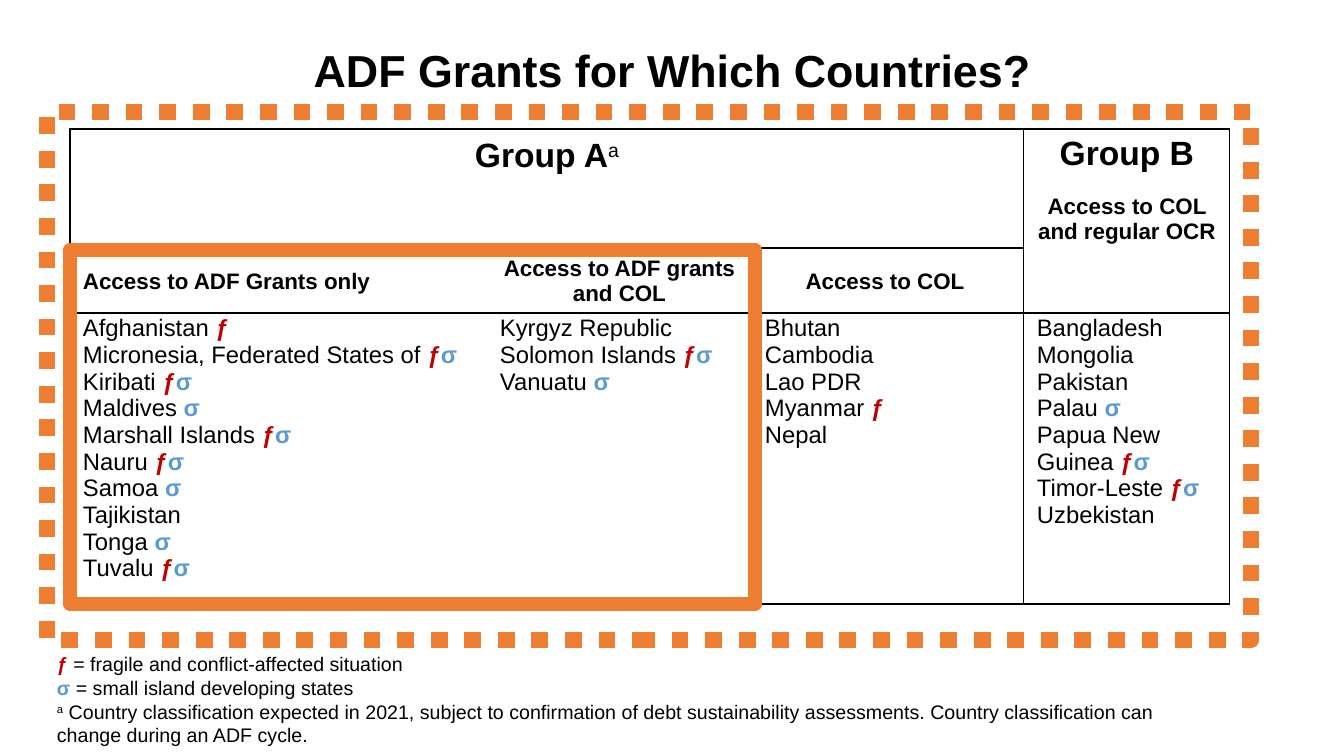
"""Builds the slide on which countries receive ADF grants."""
import itertools

import lxml.etree
import pptx
import pptx.dml.color
import pptx.enum.dml
import pptx.enum.shapes
import pptx.enum.text
import pptx.oxml.ns
import pptx.util

TITLE = "ADF Grants for Which Countries?"
GROUPS = {0: ["Group Aᵃ"], 3: ["Group B", "Access to COL and regular OCR"]}
HEADS = ["Access to ADF Grants only", "Access to ADF grants and COL", "Access to COL "]
LISTS = [
    ["Afghanistan ƒ", "Micronesia, Federated States of ƒσ", "Kiribati ƒσ",
     "Maldives σ", "Marshall Islands ƒσ", "Nauru ƒσ", "Samoa σ", "Tajikistan",
     "Tonga σ", "Tuvalu ƒσ"],
    ["Kyrgyz Republic", "Solomon Islands ƒσ", "Vanuatu σ"],
    ["Bhutan", "Cambodia", "Lao PDR", "Myanmar ƒ", "Nepal"],
    ["Bangladesh", "Mongolia", "Pakistan", "Palau σ", "Papua New", "Guinea ƒσ",
     "Timor-Leste ƒσ", "Uzbekistan"],
]
NOTES = [
    "ƒ = fragile and conflict-affected situation",
    "σ = small island developing states",
    "ᵃ Country classification expected in 2021, subject to confirmation of debt "
    "sustainability assessments. Country classification can change during an ADF cycle.",
]
SIDES = [["LTRB", "TB", "TRB", "LTR"], ["LTB", "TB", "TRB", "LRB"],
         ["LTB", "TB", "TRB", "LTRB"]]
COLS = [417, 265, 272, 206]
ROWS = [119, 65, 291]
LEFT, TOP = 70, 129

BLACK = pptx.dml.color.RGBColor(0, 0, 0)
RED = pptx.dml.color.RGBColor(0xC0, 0, 0)
BLUE = pptx.dml.color.RGBColor(0x5B, 0x9B, 0xD5)
ORANGE = pptx.dml.color.RGBColor(0xED, 0x7D, 0x31)
MARKS = {"ƒ": RED, "σ": BLUE}
FONT = "Arial"
NO_GRID = "{2D5ABB26-0587-4C30-8999-92F81FD0307C}"
CENTER = pptx.enum.text.PP_ALIGN.CENTER
START = pptx.enum.text.PP_ALIGN.LEFT
MIDDLE = pptx.enum.text.MSO_ANCHOR.MIDDLE
UPPER = pptx.enum.text.MSO_ANCHOR.TOP


def px(count):
    return pptx.util.Emu(round(count * 914400 / 100.8))


def write(frame, lines, sizes, bold=False, align=START):
    for index, line in enumerate(lines):
        para = frame.paragraphs[0] if index == 0 else frame.add_paragraph()
        para.alignment = align
        size = sizes[min(index, len(sizes) - 1)]
        for kind, chars in itertools.groupby(line, lambda c: c if c in "ƒσᵃ" else ""):
            run = para.add_run()
            run.text = "".join(chars).replace("ᵃ", "a")
            run.font.name = FONT
            run.font.size = pptx.util.Pt(size)
            run.font.bold = kind in MARKS or (bold and kind != "ᵃ")
            run.font.color.rgb = MARKS.get(kind, BLACK)
            if kind == "ᵃ":
                run._r.get_or_add_rPr().set("baseline", "30000")


def add_text(slide, box, lines, size, anchor, **style):
    frame = slide.shapes.add_textbox(*map(px, box)).text_frame
    frame.word_wrap = True
    frame.vertical_anchor = anchor
    write(frame, lines, [size], **style)
    return frame


def edge(cell, sides):
    props = cell._tc.get_or_add_tcPr()
    for side in "LRTB":
        if side in sides:
            line = lxml.etree.SubElement(props, pptx.oxml.ns.qn("a:ln" + side), w="12700")
            fill = lxml.etree.SubElement(line, pptx.oxml.ns.qn("a:solidFill"))
            lxml.etree.SubElement(fill, pptx.oxml.ns.qn("a:srgbClr"), val=str(BLACK))


def add_grid(slide):
    box = (LEFT, TOP, sum(COLS), sum(ROWS))
    table = slide.shapes.add_table(len(ROWS), len(COLS), *map(px, box)).table
    table.first_row = table.horz_banding = False
    table._tbl.tblPr.find(pptx.oxml.ns.qn("a:tableStyleId")).text = NO_GRID
    for col, width in zip(table.columns, COLS):
        col.width = px(width)
    for row, height in zip(table.rows, ROWS):
        row.height = px(height)
    for r, c in itertools.product(range(len(ROWS)), range(len(COLS))):
        cell = table.cell(r, c)
        edge(cell, SIDES[r][c])
        cell.fill.background()
        cell.margin_left = cell.margin_right = px(13)
        cell.margin_top, cell.margin_bottom = px(2), 0
    table.cell(0, 0).merge(table.cell(0, 2))
    table.cell(0, 0).margin_top = px(8)
    table.cell(0, 3).vertical_anchor = MIDDLE
    for c, lines in GROUPS.items():
        write(table.cell(0, c).text_frame, lines, [24, 16], True, CENTER)
    table.cell(0, 3).text_frame.paragraphs[1].space_before = pptx.util.Pt(16)
    for c, head in enumerate(HEADS):
        table.cell(1, c).vertical_anchor = MIDDLE
        write(table.cell(1, c).text_frame, [head], [16], True, CENTER if c else START)
    for c, names in enumerate(LISTS):
        write(table.cell(2, c).text_frame, names, [17])


def add_frame(slide, box, weight, dash=None):
    shape = slide.shapes.add_shape(
        pptx.enum.shapes.MSO_SHAPE.RECTANGLE, *map(px, box))
    shape.shadow.inherit = False
    shape.fill.background()
    shape.line.color.rgb = ORANGE
    shape.line.width = pptx.util.Pt(weight)
    if dash:
        shape.line.dash_style = dash


def main():
    deck = pptx.Presentation()
    deck.slide_width, deck.slide_height = px(1344), px(756)
    slide = deck.slides.add_slide(deck.slide_layouts[6])
    title = add_text(slide, (93, 40, 1159, 146), [TITLE], 32, UPPER,
                     bold=True, align=CENTER)
    title.margin_top = px(9)
    title.paragraphs[0].line_spacing = 0.9
    add_text(slide, (47, 647, 1144, 105), NOTES, 14, MIDDLE)
    add_grid(slide)
    add_frame(slide, (LEFT, TOP + ROWS[0] + 2, sum(COLS[:2]) + 3, sum(ROWS[1:]) - 2), 10.25)
    add_frame(slide, (47, 112, 1204, 528), 12, pptx.enum.dml.MSO_LINE.ROUND_DOT)
    deck.save("out.pptx")


if __name__ == "__main__":
    main()
